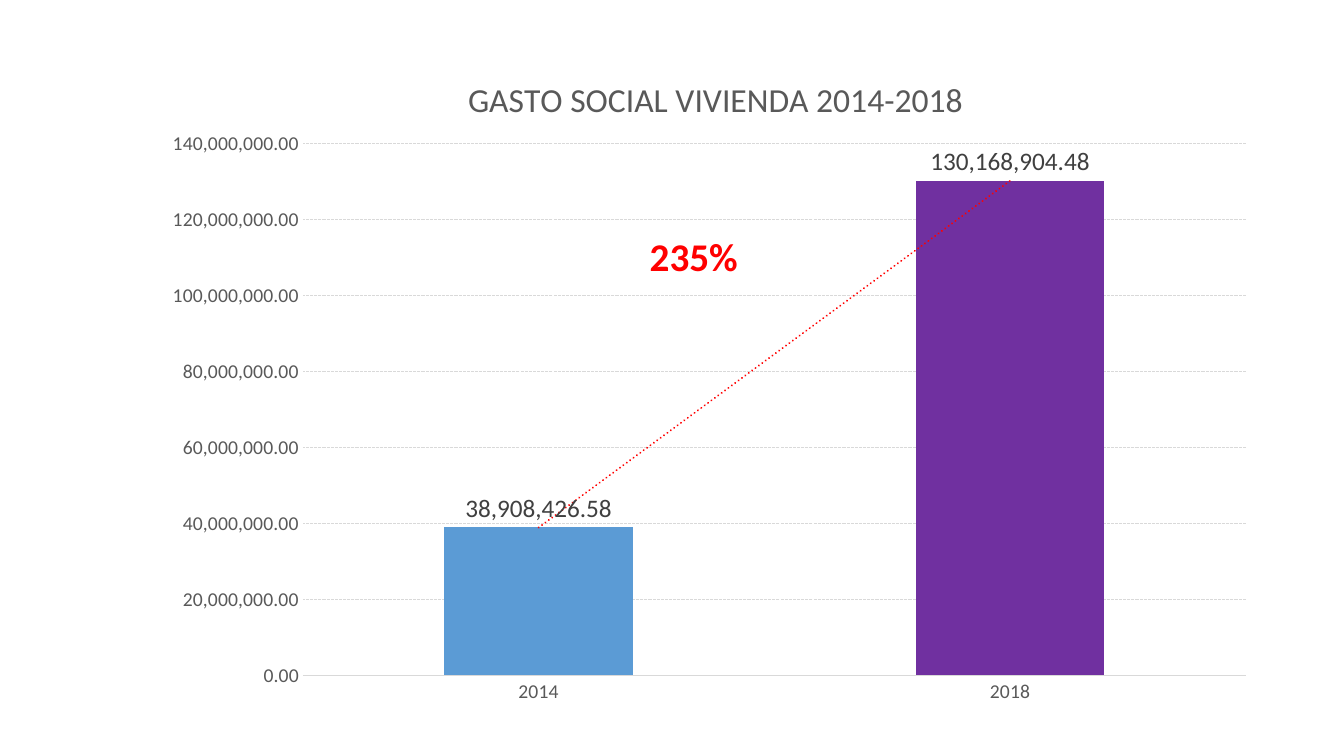
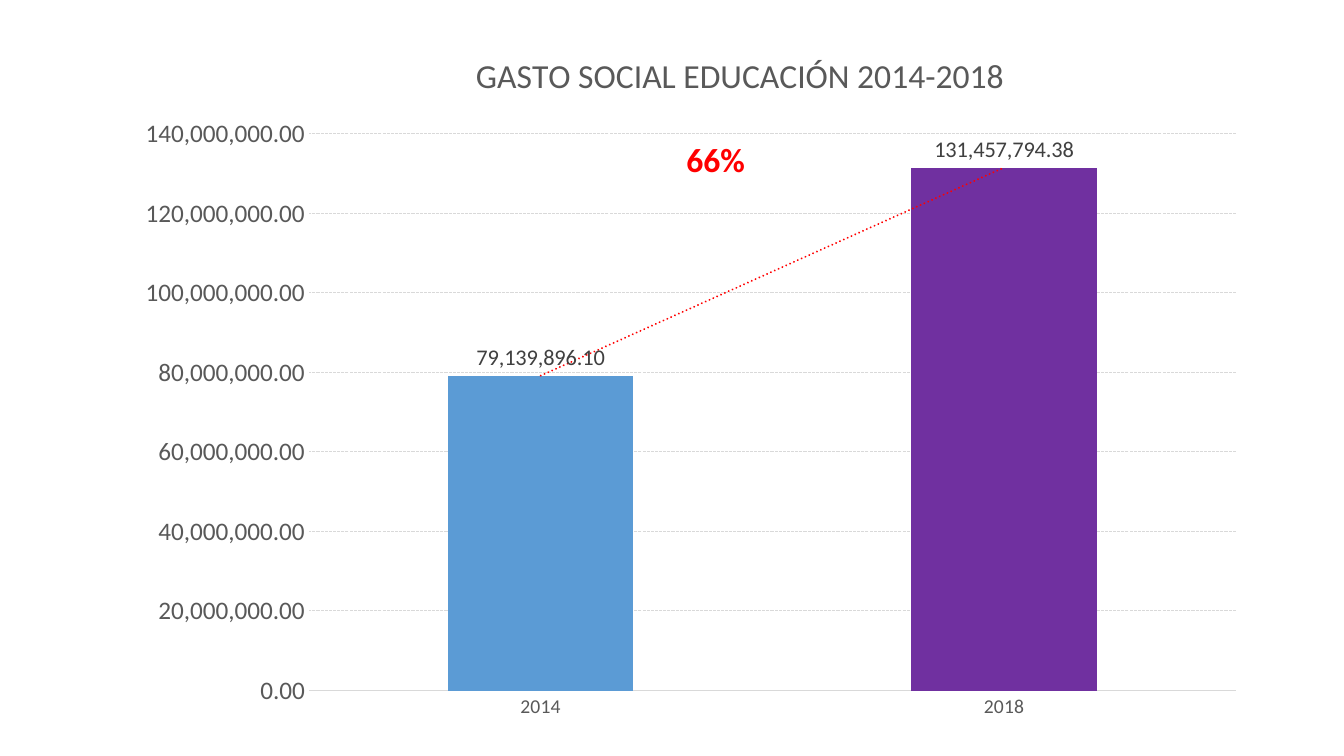
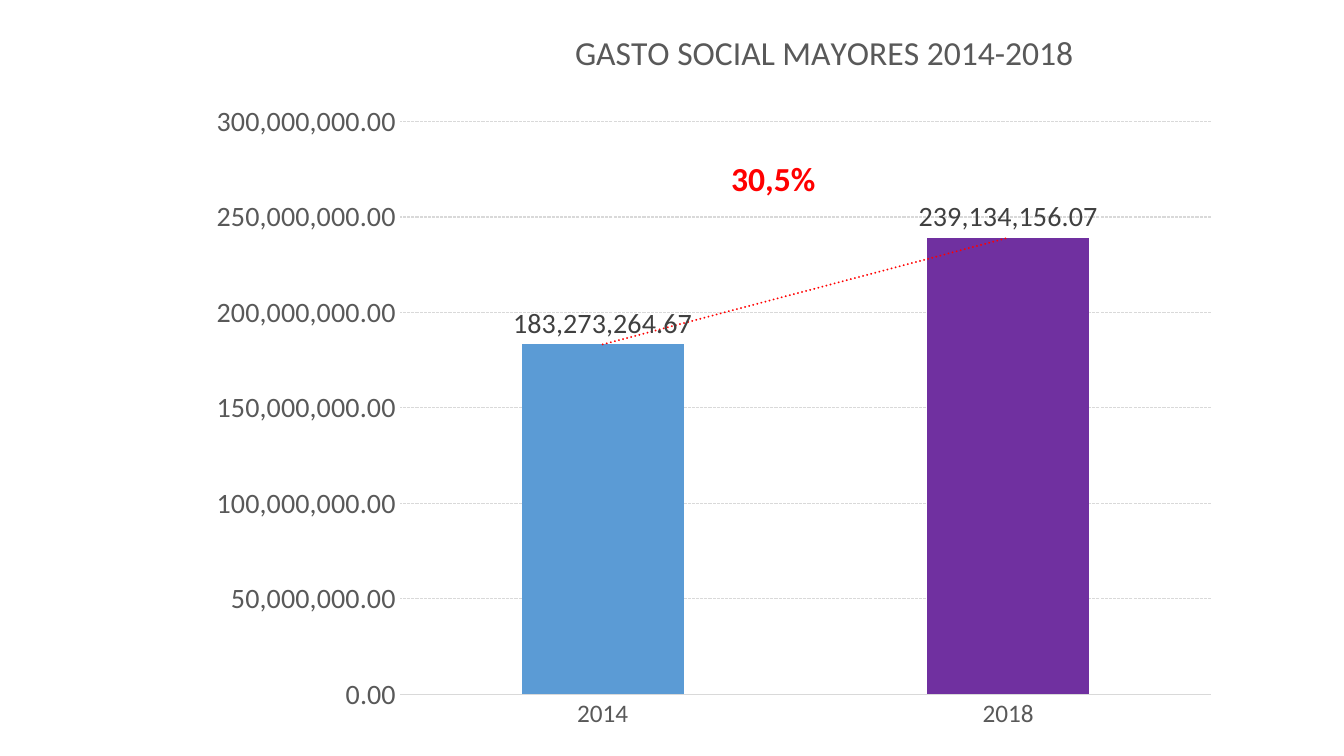
from dataclasses import dataclass
from typing import NamedTuple

import pptx
import pptx.chart.data
import pptx.dml.color
import pptx.enum.chart
import pptx.enum.dml
import pptx.enum.text
import pptx.oxml
import pptx.oxml.ns
import pptx.util

Pt = pptx.util.Pt

# Shared style
FONT = "Calibri"
NUMBER_FORMAT = "#,##0.00"
YEARS = ("2014", "2018")
TITLE_SIZE = 24
COLOURS = {
    "background": "FFFFFF",
    "first_year": "5B9BD5",
    "last_year": "7030A0",
    "growth": "FF0000",
    "text": "595959",
    "label": "404040",
    "line": "D9D9D9",
}


class Box(NamedTuple):
    """A rectangle on the slide, in points."""
    left: float
    top: float
    width: float
    height: float


@dataclass(frozen=True)
class SpendingSlide:
    title: str
    title_left: float
    title_top: float
    amounts: tuple[float, float]
    axis_maximum: int
    axis_step: int
    chart: Box
    plot: Box
    year_size: int
    amount_size: int
    label_size: int
    growth: str
    growth_box: Box
    growth_size: int


SLIDES = (
    SpendingSlide(
        title="GASTO SOCIAL VIVIENDA 2014-2018", title_left=330, title_top=50.5,
        amounts=(38908426.58, 130168904.48),
        axis_maximum=140_000_000, axis_step=20_000_000,
        chart=Box(107.3, 34.6, 799.2, 478.1), plot=Box(216.4, 102.5, 673.6, 380),
        year_size=14, amount_size=14, label_size=18,
        growth=" 235%", growth_box=Box(450.7, 162.7, 118, 41), growth_size=28,
    ),
    SpendingSlide(
        title="GASTO SOCIAL EDUCACIÓN 2014-2018", title_left=335.7, title_top=33.2,
        amounts=(79139896.10, 131457794.38),
        axis_maximum=140_000_000, axis_step=20_000_000,
        chart=Box(87.8, 23.8, 811.4, 499.7), plot=Box(220.7, 95.4, 662.1, 397.9),
        year_size=14, amount_size=18, label_size=16,
        growth="66%", growth_box=Box(483.1, 95.8, 85, 36), growth_size=24,
    ),
    SpendingSlide(
        title="GASTO SOCIAL MAYORES 2014-2018", title_left=406.4, title_top=16.9,
        amounts=(183273264.67, 239134156.07),
        axis_maximum=300_000_000, axis_step=50_000_000,
        chart=Box(140.4, 13, 739.4, 517.7), plot=Box(285.7, 86.8, 579.3, 409.3),
        year_size=18, amount_size=20, label_size=20,
        growth=" 30,5%", growth_box=Box(509.8, 109.4, 95.8, 36), growth_size=24,
    ),
)


def colour(name: str) -> pptx.dml.color.RGBColor:
    return pptx.dml.color.RGBColor.from_string(COLOURS[name])


def style_font(font, size: float, colour_name: str, bold: bool = False) -> None:
    font.name = FONT
    font.size = Pt(size)
    font.bold = bold
    font.color.rgb = colour(colour_name)


def style_line(line) -> None:
    line.color.rgb = colour("line")
    line.width = Pt(0.75)


def fill_solid(fill, colour_name: str) -> None:
    fill.solid()
    fill.fore_color.rgb = colour(colour_name)


# Chart parts that need XML
def layout_element(target: str, **fractions: float):
    modes = "".join(f'<c:{axis}Mode val="edge"/>' for axis in "xy")
    values = "".join(f'<c:{key} val="{value:.4f}"/>' for key, value in fractions.items())
    return pptx.oxml.parse_xml(
        f'<c:layout {pptx.oxml.ns.nsdecls("c")}><c:manualLayout>'
        f"{target}{modes}{values}</c:manualLayout></c:layout>"
    )


def place_title_and_plot(chart, content: SpendingSlide) -> None:
    outer, plot = content.chart, content.plot
    title_element = chart.element.xpath("c:chart/c:title")[0]
    plot_element = chart.element.xpath("c:chart/c:plotArea")[0]
    for parent in (title_element, plot_element):
        for layout in parent.xpath("c:layout"):
            parent.remove(layout)
    title_element.xpath("c:tx")[0].addnext(layout_element(
        "",
        x=(content.title_left - outer.left) / outer.width,
        y=(content.title_top - outer.top) / outer.height,
    ))
    plot_element.insert(0, layout_element(
        '<c:layoutTarget val="inner"/>',
        x=(plot.left - outer.left) / outer.width,
        y=(plot.top - outer.top) / outer.height,
        w=plot.width / outer.width,
        h=plot.height / outer.height,
    ))


def add_trend_line(chart) -> None:
    trend_line = pptx.oxml.parse_xml(
        f'<c:trendline {pptx.oxml.ns.nsdecls("c", "a")}><c:spPr>'
        f'<a:ln w="{Pt(1.5)}" cap="rnd"><a:solidFill>'
        f'<a:srgbClr val="{COLOURS["growth"]}"/></a:solidFill>'
        '<a:prstDash val="sysDot"/></a:ln></c:spPr>'
        '<c:trendlineType val="linear"/><c:dispRSqr val="0"/><c:dispEq val="0"/>'
        "</c:trendline>"
    )
    chart.element.xpath(".//c:ser/c:cat")[0].addprevious(trend_line)


# Chart
def style_axes(chart, content: SpendingSlide) -> None:
    years, amounts = chart.category_axis, chart.value_axis
    for axis, size in ((years, content.year_size), (amounts, content.amount_size)):
        axis.major_tick_mark = pptx.enum.chart.XL_TICK_MARK.NONE
        axis.minor_tick_mark = pptx.enum.chart.XL_TICK_MARK.NONE
        style_font(axis.tick_labels.font, size, "text")
    style_line(years.format.line)
    amounts.format.line.fill.background()
    amounts.minimum_scale = 0
    amounts.maximum_scale = content.axis_maximum
    amounts.major_unit = content.axis_step
    amounts.tick_labels.number_format = NUMBER_FORMAT
    amounts.tick_labels.number_format_is_linked = False
    amounts.has_major_gridlines = True
    grid_line = amounts.major_gridlines.format.line
    style_line(grid_line)
    grid_line.dash_style = pptx.enum.dml.MSO_LINE.SQUARE_DOT


def style_columns(chart, content: SpendingSlide) -> None:
    plot = chart.plots[0]
    plot.gap_width = 150
    plot.vary_by_categories = False
    series = plot.series[0]
    fill_solid(series.format.fill, "first_year")
    fill_solid(series.points[1].format.fill, "last_year")
    labels = series.data_labels
    labels.show_value = True
    labels.position = pptx.enum.chart.XL_LABEL_POSITION.OUTSIDE_END
    labels.number_format = NUMBER_FORMAT
    labels.number_format_is_linked = False
    style_font(labels.font, content.label_size, "label")


def add_spending_chart(slide, content: SpendingSlide) -> None:
    chart_data = pptx.chart.data.CategoryChartData(number_format=NUMBER_FORMAT)
    chart_data.categories = YEARS
    chart_data.add_series("Series 1", content.amounts)
    chart = slide.shapes.add_chart(
        pptx.enum.chart.XL_CHART_TYPE.COLUMN_CLUSTERED,
        *(Pt(length) for length in content.chart), chart_data,
    ).chart
    chart.font.name = FONT
    chart.font.size = Pt(10)
    chart.has_legend = False
    chart.has_title = True
    run = chart.chart_title.text_frame.paragraphs[0].add_run()
    run.text = content.title
    style_font(run.font, TITLE_SIZE, "text")
    style_axes(chart, content)
    style_columns(chart, content)
    add_trend_line(chart)
    place_title_and_plot(chart, content)


# Growth figure
def add_growth(slide, content: SpendingSlide) -> None:
    shape = slide.shapes.add_textbox(*(Pt(length) for length in content.growth_box))
    frame = shape.text_frame
    frame.word_wrap = True
    frame.auto_size = pptx.enum.text.MSO_AUTO_SIZE.SHAPE_TO_FIT_TEXT
    run = frame.paragraphs[0].add_run()
    run.text = content.growth
    style_font(run.font, content.growth_size, "growth", bold=True)


def main() -> None:
    presentation = pptx.Presentation()
    presentation.slide_width = Pt(960)
    presentation.slide_height = Pt(540)
    blank_layout = presentation.slide_layouts[6]
    for content in SLIDES:
        slide = presentation.slides.add_slide(blank_layout)
        fill_solid(slide.background.fill, "background")
        add_spending_chart(slide, content)
        add_growth(slide, content)
    presentation.save("out.pptx")


if __name__ == "__main__":
    main()
